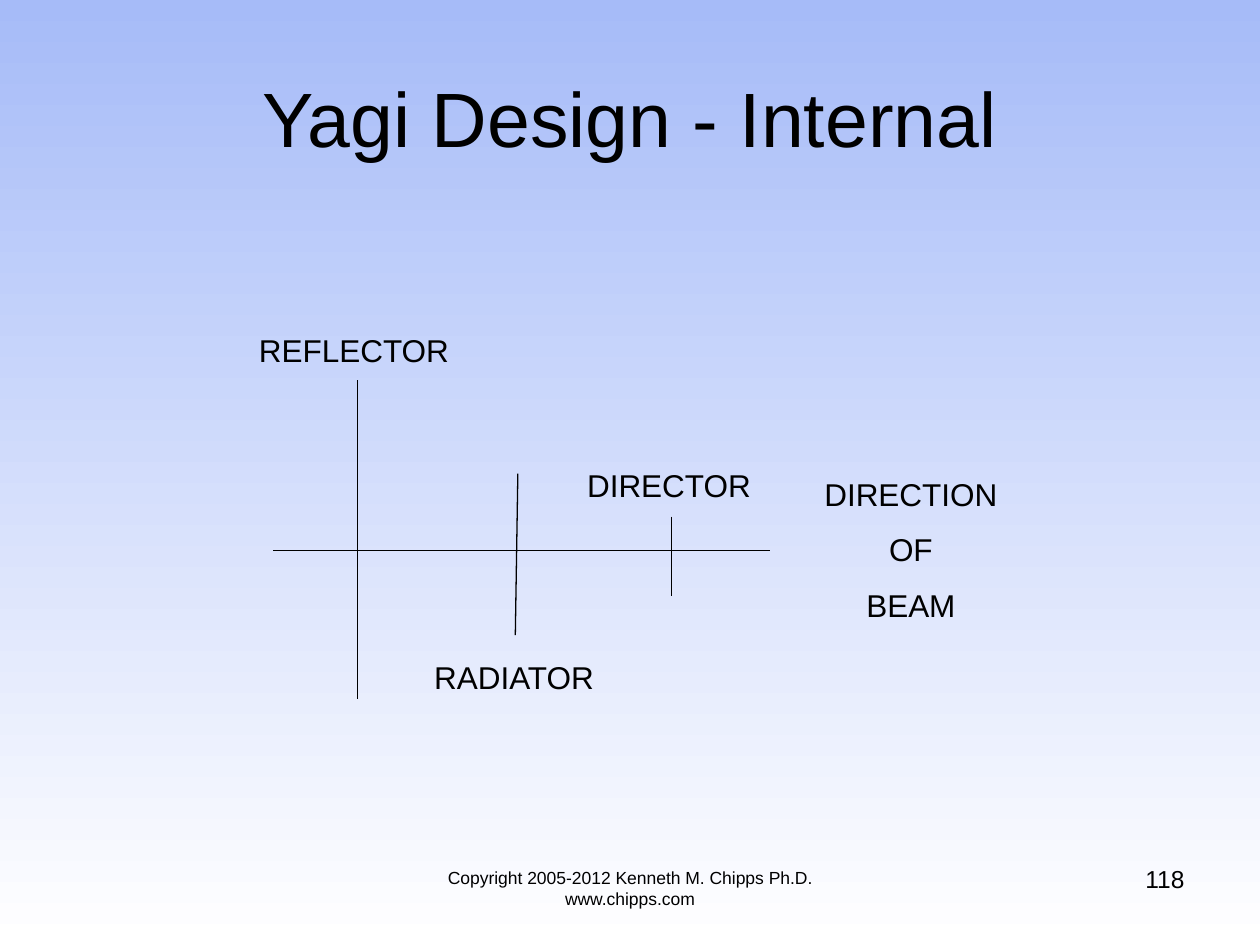
from pptx import Presentation
from pptx.dml.color import RGBColor
from pptx.enum import shapes, text
from pptx.oxml.ns import qn
from pptx.util import Inches, Pt
from lxml import etree

BLACK = RGBColor(0x00, 0x00, 0x00)
SKY = RGBColor(0xA6, 0xBB, 0xF8)
WHITE = RGBColor(0xFF, 0xFF, 0xFF)
LABEL_WIDTH = 1.9


def write(sp, lines, size, align=text.PP_ALIGN.CENTER, anchor=text.MSO_ANCHOR.TOP, gap=0):
    tf = sp.text_frame
    tf.word_wrap = True
    tf.vertical_anchor = anchor
    for i, line in enumerate(lines):
        p = tf.add_paragraph() if i else tf.paragraphs[0]
        p.alignment = align
        p.space_before = Pt(gap if i else 0)
        r = p.add_run()
        r.text = line
        r.font.name = "Arial"
        r.font.size = Pt(size)
        r.font.color.rgb = BLACK


prs = Presentation()
prs.slide_width, prs.slide_height = Inches(10), Inches(7.5)
s = prs.slides.add_slide(prs.slide_layouts[5])

# Background, sky blue at the top to white at the bottom
fill = s.background.fill
fill.gradient()
fill.gradient_angle = 270
for stop, color in zip(fill.gradient_stops, (SKY, WHITE)):
    stop.color.rgb = color

# Title
title = s.shapes.title
title.left, title.top = Inches(0.5), Inches(0.3)
title.width, title.height = Inches(9), Inches(1.25)
write(title, ["Yagi Design - Internal"], 44, anchor=text.MSO_ANCHOR.MIDDLE)

# Footer and slide number
sp = s.shapes.add_textbox(Inches(3), Inches(6.83), Inches(4), Inches(0.52))
write(sp, ["Copyright 2005-2012 Kenneth M. Chipps Ph.D. www.chipps.com"], 10)
sp = s.shapes.add_textbox(Inches(7.17), Inches(6.81), Inches(2.33), Inches(0.52))
write(sp, ["118"], 14, align=text.PP_ALIGN.RIGHT)

# Antenna: boom, reflector, radiator, director
for x1, y1, x2, y2 in [
    (2.17, 4.37, 6.11, 4.37),
    (2.84, 3.02, 2.84, 5.55),
    (4.11, 3.76, 4.09, 5.04),
    (5.33, 4.1, 5.33, 4.73),
]:
    element = s.shapes.add_connector(
        shapes.MSO_CONNECTOR.STRAIGHT, Inches(x1), Inches(y1), Inches(x2), Inches(y2))
    element.line.color.rgb = BLACK
    element.line.width = Pt(0.75)
    etree.SubElement(element._element.spPr, qn("a:effectLst"))

# Labels
for left, top, height, lines in [
    (1.86, 2.58, 0.4, ["REFLECTOR"]),
    (3.13, 5.17, 0.4, ["RADIATOR"]),
    (4.36, 3.65, 0.4, ["DIRECTOR"]),
    (6.28, 3.72, 1.3, ["DIRECTION", "OF", "BEAM"]),
]:
    sp = s.shapes.add_textbox(Inches(left), Inches(top), Inches(LABEL_WIDTH), Inches(height))
    write(sp, lines, 18, gap=10)
    sp.text_frame.auto_size = text.MSO_AUTO_SIZE.SHAPE_TO_FIT_TEXT

prs.save("out.pptx")
